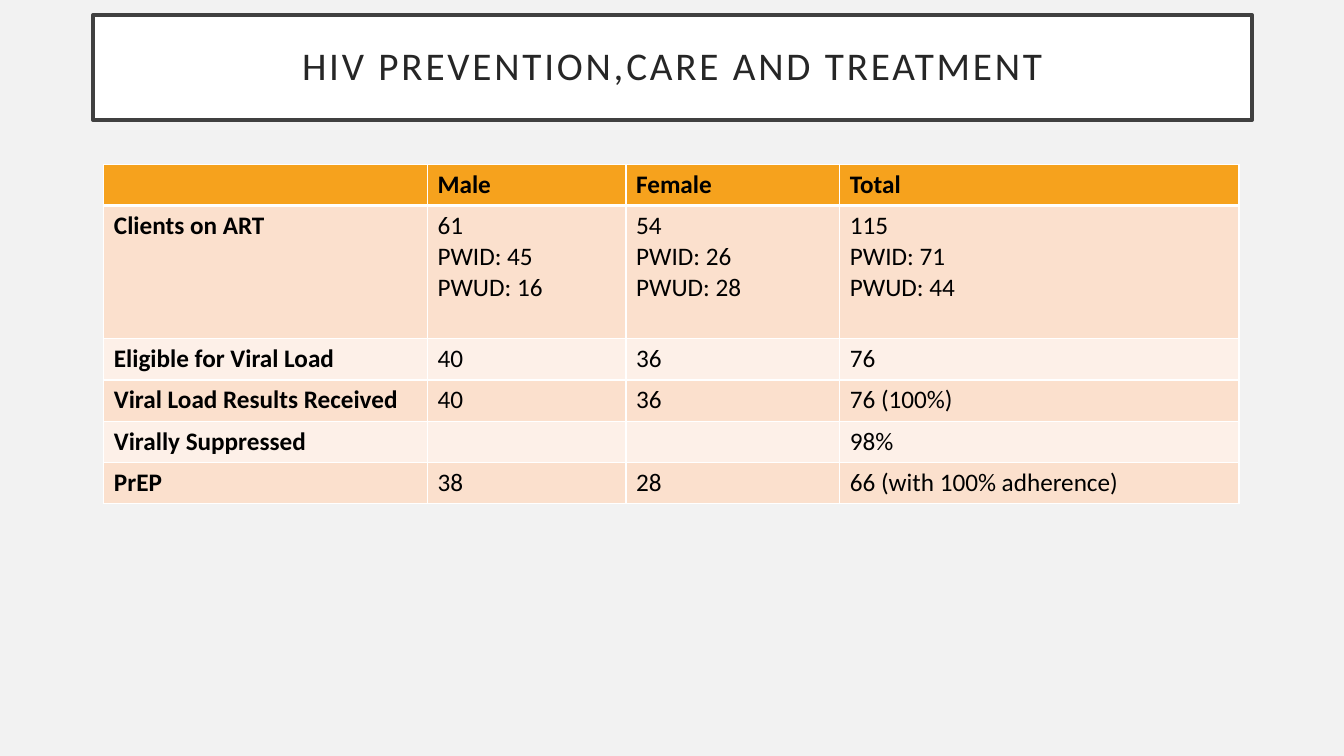
from lxml.etree import SubElement
from pptx import Presentation
from pptx.dml.color import RGBColor
from pptx.enum.text import MSO_ANCHOR as Anchor, MSO_AUTO_SIZE as AutoSize, PP_ALIGN as Align
from pptx.oxml import parse_xml
from pptx.oxml.ns import nsdecls, qn
from pptx.util import Inches, Pt

FONT = "Calibri"
HEADER_FILL = "F6A21D"
BAND_FILLS = ("FBE0CD", "FDF0E8")
COLUMN_WIDTHS = (3.21, 1.97, 2.12, 3.96)
ROW_HEIGHT = 0.41
CLIENTS_ROW_HEIGHT = 1.32
ROWS = (
    ("", "Male", "Female", "Total"),
    ("Clients on ART", "61\nPWID: 45\nPWUD: 16", "54\nPWID: 26\nPWUD: 28",
     "115\nPWID: 71\nPWUD: 44"),
    ("Eligible for Viral Load", "40", "36", "76"),
    ("Viral Load Results Received", "40", "36", "76 (100%)"),
    ("Virally Suppressed", "", "", "98%"),
    ("PrEP", "38", "28", "66 (with 100% adherence)"),
)


def set_fill(fill, color):
    fill.solid()
    fill.fore_color.rgb = RGBColor.from_string(color)


def set_format(target, values):
    for name, value in values.items():
        setattr(target, name, value)


def set_font(font, color, size, bold=False):
    set_format(font, {"name": FONT, "size": Pt(size), "bold": bold})
    set_fill(font.fill, color)


def add_title(slide, text):
    title = slide.shapes.title
    set_format(title, {"left": Inches(0.92), "top": Inches(0.15),
                       "width": Inches(11.5), "height": Inches(1.04)})
    set_fill(title.fill, "FFFFFF")
    set_fill(title.line.fill, "404040")
    title.line.width = Pt(2.5)
    frame = title.text_frame
    set_format(frame, {"word_wrap": True, "auto_size": AutoSize.NONE,
                       "vertical_anchor": Anchor.MIDDLE})
    for side in ("left", "top", "right", "bottom"):
        setattr(frame, f"margin_{side}", Inches(0.2))
    paragraph = frame.paragraphs[0]
    set_format(paragraph, {"alignment": Align.CENTER, "line_spacing": 0.9})
    run = paragraph.add_run()
    run.text = text
    set_font(run.font, "262626", 28)
    run.font._element.set("spc", "200")  # letter spacing in 1/100 pt


def set_borders(cell, widths):
    properties = cell._tc.get_or_add_tcPr()
    # Border lines come before the fill in the cell properties
    for index, (side, width) in enumerate(widths.items()):
        line = parse_xml(f'<a:ln{side} {nsdecls("a")} w="{Pt(width)}"/>')
        fill = SubElement(line, qn("a:solidFill"))
        SubElement(fill, qn("a:srgbClr"), val="FFFFFF")
        properties.insert(index, line)


def fill_cell(cell, text, color, bold, borders):
    cell.text = text
    for paragraph in cell.text_frame.paragraphs:
        for run in paragraph.runs:
            set_font(run.font, "000000", 18, bold)
    set_fill(cell.fill, color)
    set_borders(cell, borders)


def add_results_table(slide):
    heights = [ROW_HEIGHT] * len(ROWS)
    heights[1] = CLIENTS_ROW_HEIGHT
    table = slide.shapes.add_table(
        len(ROWS), len(COLUMN_WIDTHS), Inches(1.03), Inches(1.63),
        Inches(sum(COLUMN_WIDTHS)), Inches(sum(heights))).table
    for column, width in zip(table.columns, COLUMN_WIDTHS):
        column.width = Inches(width)
    for row_index, texts in enumerate(ROWS):
        table.rows[row_index].height = Inches(heights[row_index])
        is_header = row_index == 0
        color = HEADER_FILL if is_header else BAND_FILLS[(row_index - 1) % 2]
        # A thick rule separates the header from the first row
        borders = {"L": 1, "R": 1, "T": 3 if row_index == 1 else 1,
                   "B": 3 if is_header else 1}
        for column_index, text in enumerate(texts):
            fill_cell(table.cell(row_index, column_index), text, color,
                      is_header or column_index == 0, borders)


def main():
    presentation = Presentation()
    set_format(presentation, {"slide_width": Inches(13.33), "slide_height": Inches(7.5)})
    slide = presentation.slides.add_slide(presentation.slide_layouts[5])
    set_fill(slide.background.fill, "F2F2F2")
    add_title(slide, "HIV PREVENTION,CARE AND TREATMENT")
    add_results_table(slide)
    presentation.save("out.pptx")


if __name__ == "__main__":
    main()
